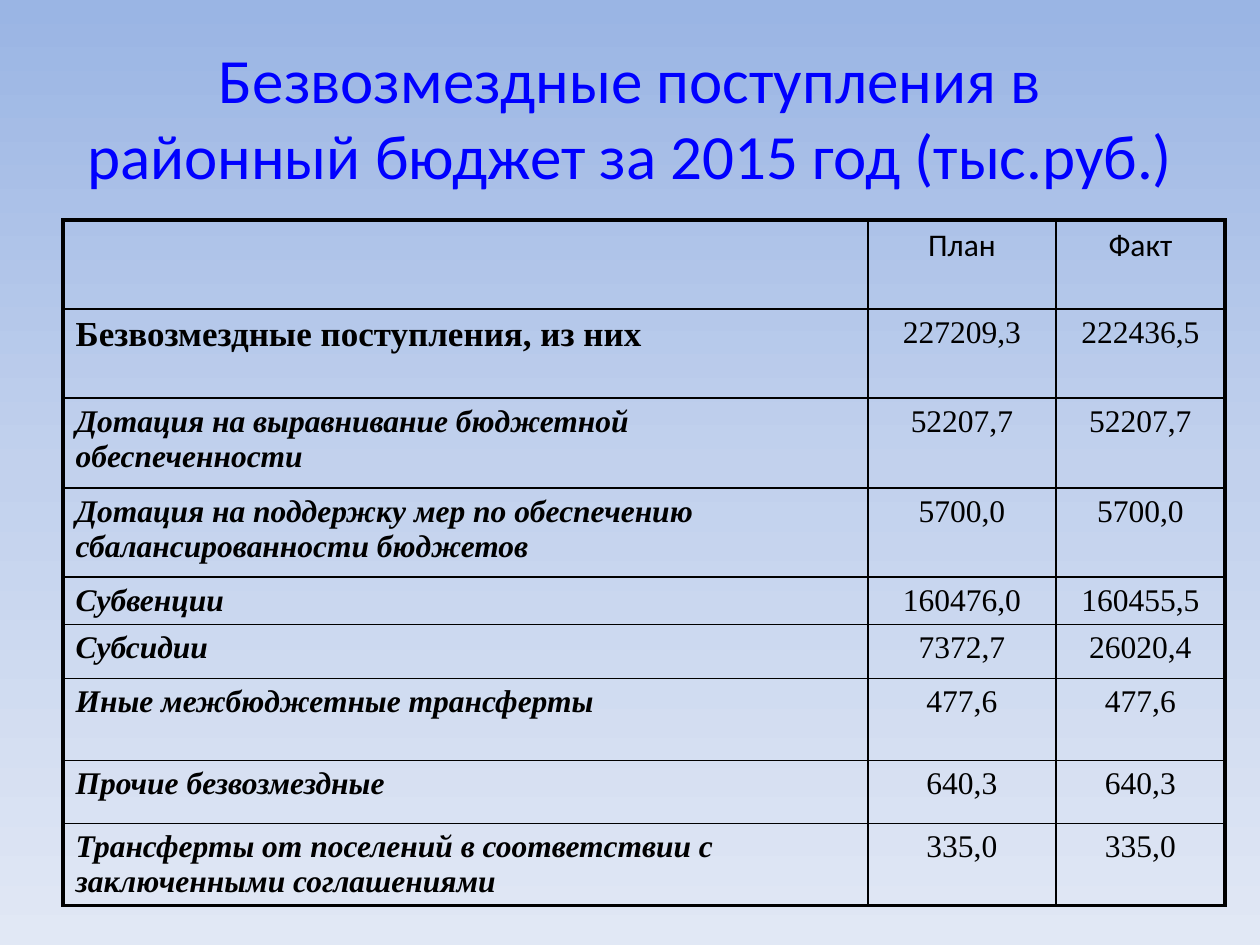
from copy import deepcopy

from lxml import etree
from pptx import Presentation
from pptx import util as u
from pptx.dml.color import RGBColor
from pptx.enum import text
from pptx.oxml import ns

PX = 914400 // 126
COLORS = {"title": "0000FF", "ink": "000000"}
BACKGROUND = [(0, "9AB5E4"), (0.5, "C2D1ED"), (1, "E1E8F5")]
TITLE = "Безвозмездные поступления в районный бюджет за 2015 год (тыс.руб.)"
TITLE_BOX = (63, 38, 1134, 157)
TABLE_ORIGIN = (63, 220)
COLUMN_WIDTHS = [805, 188, 169]
ROWS = [
    (89, "", "План", "Факт"),
    (89, "Безвозмездные поступления, из них", "227209,3", "222436,5"),
    (90, "Дотация на выравнивание бюджетной обеспеченности", "52207,7", "52207,7"),
    (89, "Дотация на поддержку мер по обеспечению сбалансированности бюджетов",
     "5700,0", "5700,0"),
    (47, "Субвенции", "160476,0", "160455,5"),
    (54, "Субсидии", "7372,7", "26020,4"),
    (82, "Иные межбюджетные трансферты", "477,6", "477,6"),
    (63, "Прочие безвозмездные", "640,3", "640,3"),
    (82, "Трансферты от поселений в соответствии с заключенными соглашениями",
     "335,0", "335,0"),
]
THIN, THICK = 1, 2.25


def paint_background(slide):
    fill = slide.background.fill
    fill.gradient()
    fill.gradient_angle = 270
    stop_list = slide.element.find(".//" + ns.qn("a:gsLst"))
    stop_list.append(deepcopy(stop_list[-1]))
    for stop, (position, color) in zip(fill.gradient_stops, BACKGROUND):
        stop.position = position
        stop.color.rgb = RGBColor.from_string(color)


def format_paragraph(paragraph, font_name, size, color, centered,
                     bold=False, italic=False):
    paragraph.alignment = text.PP_ALIGN.CENTER if centered else text.PP_ALIGN.LEFT
    for run in paragraph.runs:
        run.font.name = font_name
        run.font.size = u.Pt(size)
        run.font.bold = bold
        run.font.italic = italic
        run.font.color.rgb = RGBColor.from_string(color)


def add_title(slide):
    title = slide.shapes.title
    title.left, title.top, title.width, title.height = [v * PX for v in TITLE_BOX]
    frame = title.text_frame
    frame.text = TITLE
    frame.word_wrap = True
    frame.vertical_anchor = text.MSO_ANCHOR.MIDDLE
    format_paragraph(frame.paragraphs[0], "Calibri", 36, COLORS["title"], True)


def set_borders(cell, outer_sides):
    properties = cell._tc.get_or_add_tcPr()
    for index, side in enumerate("LRTB"):
        width = THICK if side in outer_sides else THIN
        line = etree.Element(ns.qn(f"a:ln{side}"), w=str(u.Pt(width)))
        fill = etree.SubElement(line, ns.qn("a:solidFill"))
        etree.SubElement(fill, ns.qn("a:srgbClr"), val=COLORS["ink"])
        properties.insert(index, line)


def set_space_before(paragraph, percent):
    spacing = etree.Element(ns.qn("a:spcBef"))
    etree.SubElement(spacing, ns.qn("a:spcPct"), val=str(percent * 1000))
    paragraph._p.get_or_add_pPr().insert(0, spacing)


def add_budget_table(slide):
    left, top = TABLE_ORIGIN
    last_row, last_column = len(ROWS) - 1, len(COLUMN_WIDTHS) - 1
    frame = slide.shapes.add_table(
        len(ROWS), len(COLUMN_WIDTHS), left * PX, top * PX,
        sum(COLUMN_WIDTHS) * PX, sum(row[0] for row in ROWS) * PX)
    table = frame.table
    table.first_row = table.horz_banding = False
    for column, width in zip(table.columns, COLUMN_WIDTHS):
        column.width = width * PX
    for row_index, (height, *values) in enumerate(ROWS):
        table.rows[row_index].height = height * PX
        for column_index, value in enumerate(values):
            cell = table.cell(row_index, column_index)
            cell.text = value
            cell.fill.background()
            sides = {"L": column_index == 0, "R": column_index == last_column,
                     "T": row_index == 0, "B": row_index == last_row}
            set_borders(cell, [side for side, outer in sides.items() if outer])
            is_label = column_index == 0
            paragraph = cell.text_frame.paragraphs[0]
            format_paragraph(
                paragraph, "Calibri" if row_index == 0 else "Times New Roman",
                20 if is_label and row_index == 1 else 18, COLORS["ink"],
                not is_label, bold=is_label, italic=is_label and row_index > 1)
            set_space_before(paragraph, 20)


def main():
    presentation = Presentation()
    presentation.slide_width, presentation.slide_height = 1260 * PX, 945 * PX
    slide = presentation.slides.add_slide(presentation.slide_layouts[5])
    paint_background(slide)
    add_title(slide)
    add_budget_table(slide)
    presentation.save("out.pptx")


if __name__ == "__main__":
    main()
